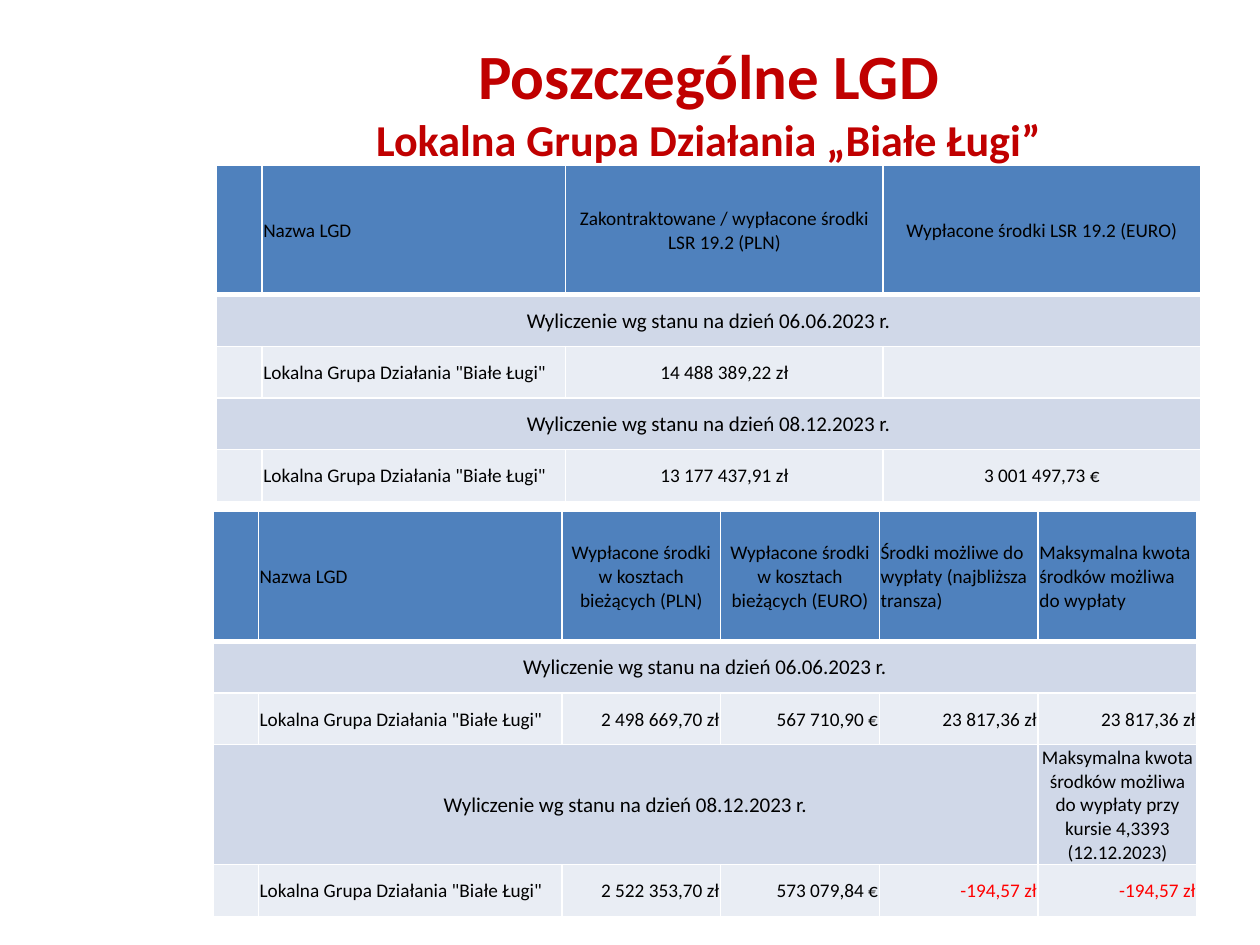
from pptx import Presentation
from pptx import util as u
from pptx.dml.color import RGBColor
from pptx.enum import text as t
from lxml import etree
from pptx.oxml import ns

RED = RGBColor(0xC0, 0x00, 0x00)
BRIGHT_RED = RGBColor(0xFF, 0x00, 0x00)
BLACK = RGBColor(0x00, 0x00, 0x00)
BLUE = RGBColor(0x4F, 0x81, 0xBD)
BAND = RGBColor(0xD0, 0xD8, 0xE8)
PALE = RGBColor(0xE9, 0xED, 0xF4)
WHITE = RGBColor(0xFF, 0xFF, 0xFF)

LEFT, CENTER, RIGHT = t.PP_ALIGN.LEFT, t.PP_ALIGN.CENTER, t.PP_ALIGN.RIGHT
NUMBER, NAME, AMOUNT = 0.36, 2.41, 1.26
HEADER, ROW = 1.03, 0.41


def write(para, text, size=11, color=BLACK, bold=False, align=LEFT):
    para.alignment = align
    span = para.add_run()
    span.text = text
    span.font.name = "Calibri"
    span.font.size = u.Pt(size)
    span.font.bold = bold
    span.font.color.rgb = color


def add_border(cell, side, points):
    line = etree.SubElement(cell._tc.get_or_add_tcPr(), ns.qn(f"a:ln{side}"), w=str(u.Pt(points)))
    fill = etree.SubElement(line, ns.qn("a:solidFill"))
    etree.SubElement(fill, ns.qn("a:srgbClr"), val=str(WHITE))


deck = Presentation()
deck.slide_width, deck.slide_height = u.Inches(10), u.Inches(7.5)
page = deck.slides.add_slide(deck.slide_layouts[5])

title = page.shapes.title
title.left, title.top = u.Inches(1.33), u.Inches(0.13)
title.width, title.height = u.Inches(8.59), u.Inches(1.18)
frame = title.text_frame
frame.auto_size = t.MSO_AUTO_SIZE.NONE
frame.word_wrap = True
frame.vertical_anchor = t.MSO_ANCHOR.BOTTOM
frame.margin_top = frame.margin_bottom = 0
heading = frame.paragraphs[0]
write(heading, "Poszczególne LGD", size=36, color=RED, bold=True, align=CENTER)
heading.add_line_break()
write(heading, "Lokalna Grupa Działania „Białe Ługi”", size=25.2, color=RED, bold=True, align=CENTER)

GROUP = 'Lokalna Grupa Działania "Białe Ługi"'
JUNE = "Wyliczenie wg stanu na dzień 06.06.2023 r."
DECEMBER = "Wyliczenie wg stanu na dzień 08.12.2023 r."

running_costs = {
    "place": (1.69, 4.06),
    "columns": [NUMBER, NAME] + [AMOUNT] * 4,
    "header_align": [LEFT, LEFT, CENTER, CENTER, LEFT, LEFT],
    "amount_align": RIGHT,
    "merged": {1: 6, 3: 5},
    "rows": [
        ["", "Nazwa LGD", "Wypłacone środki w kosztach bieżących (PLN)",
         "Wypłacone środki w kosztach bieżących (EURO)",
         "Środki możliwe do wypłaty (najbliższa transza)",
         "Maksymalna kwota środków możliwa do wypłaty"],
        [JUNE, "", "", "", "", ""],
        ["", GROUP, "2 498 669,70 zł", "567 710,90 €", "23 817,36 zł", "23 817,36 zł"],
        [DECEMBER, "", "", "", "",
         "Maksymalna kwota środków możliwa do wypłaty przy kursie 4,3393 (12.12.2023)"],
        ["", GROUP, "2 522 353,70 zł", "573 079,84 €", "-194,57 zł", "-194,57 zł"],
    ],
}
strategy_funds = {
    "place": (1.72, 1.31),
    "columns": [NUMBER, NAME] + [AMOUNT * 2] * 2,
    "header_align": [LEFT, LEFT, CENTER, CENTER],
    "amount_align": CENTER,
    "merged": {1: 4, 3: 4},
    "rows": [
        ["", "Nazwa LGD", "Zakontraktowane / wypłacone środki LSR 19.2 (PLN)",
         "Wypłacone środki LSR 19.2 (EURO)"],
        [JUNE, "", "", ""],
        ["", GROUP, "14 488 389,22 zł", ""],
        [DECEMBER, "", "", ""],
        ["", GROUP, "13 177 437,91 zł", "3 001 497,73 €"],
    ],
}

for content in (running_costs, strategy_funds):
    columns, rows = content["columns"], content["rows"]
    heights = [HEADER] + [ROW] * (len(rows) - 1)
    left, top = content["place"]
    table = page.shapes.add_table(
        len(rows), len(columns), u.Inches(left), u.Inches(top),
        u.Inches(sum(columns)), u.Inches(sum(heights))).table
    for column, width in zip(table.columns, columns):
        column.width = u.Inches(width)
    for row, height in zip(table.rows, heights):
        row.height = u.Inches(height)
    for r, texts in enumerate(rows):
        for c, text in enumerate(texts):
            cell = table.cell(r, c)
            for side in "LRTB":
                thick = (r == 0 and side == "B") or (r == 1 and side == "T")
                add_border(cell, side, 3 if thick else 1)
            cell.fill.solid()
            cell.fill.fore_color.rgb = BLUE if r == 0 else BAND if r % 2 else PALE
            cell.vertical_anchor = t.MSO_ANCHOR.MIDDLE
            cell.margin_left = cell.margin_right = cell.margin_top = u.Inches(0.01)
            cell.margin_bottom = 0
            para = cell.text_frame.paragraphs[0]
            if not text:
                para.font.size = u.Pt(11)
                continue
            if r == 0:
                align = content["header_align"][c]
            elif r in content["merged"]:
                align = CENTER
            else:
                align = LEFT if c == 1 else content["amount_align"]
            write(para, text, size=12 if text in (JUNE, DECEMBER) else 11,
                  color=BRIGHT_RED if text.startswith("-") else BLACK, align=align)
    for r, count in content["merged"].items():
        table.cell(r, 0).merge(table.cell(r, count - 1))

deck.save("out.pptx")
